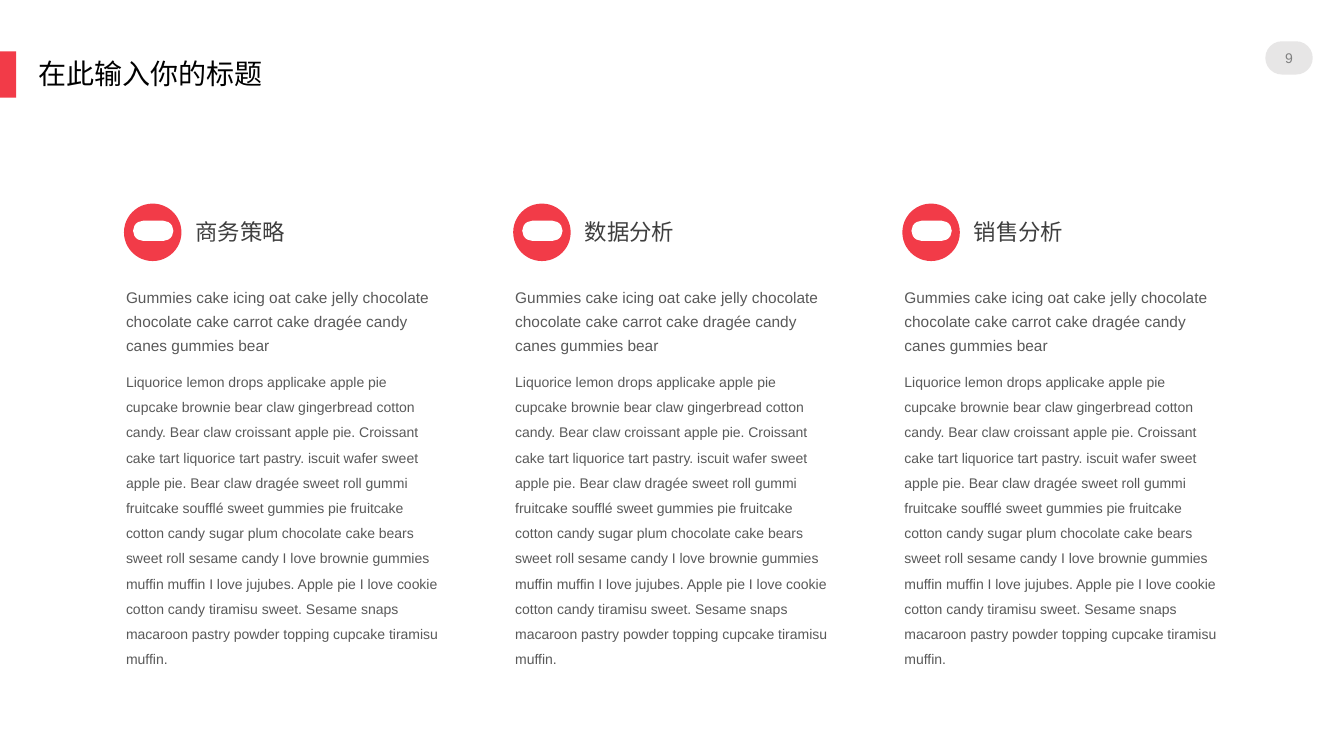
import pptx
import pptx.util
import pptx.dml.color
import pptx.enum.shapes
import pptx.enum.text

Inches = pptx.util.Inches
SHAPE = pptx.enum.shapes.MSO_SHAPE
ALIGN = pptx.enum.text.PP_ALIGN
ANCHOR = pptx.enum.text.MSO_ANCHOR

COLORS = {
    "red": "F23B48",
    "pill": "E7E6E6",
    "number": "808080",
    "title": "000000",
    "heading": "3F3F3F",
    "body": "595959",
    "white": "FFFFFF",
}

HEADINGS = ["商务策略", "数据分析", "销售分析"]
LEAD = ("Gummies cake icing oat cake jelly chocolate chocolate cake carrot cake "
        "dragée candy canes gummies bear")
BODY = ("Liquorice lemon drops applicake apple pie cupcake brownie bear claw "
        "gingerbread cotton candy. Bear claw croissant apple pie. Croissant cake "
        "tart liquorice tart pastry. iscuit wafer sweet apple pie. Bear claw dragée "
        "sweet roll gummi fruitcake soufflé sweet gummies pie fruitcake cotton candy "
        "sugar plum chocolate cake bears sweet roll sesame candy I love brownie "
        "gummies muffin muffin I love jujubes. Apple pie I love cookie cotton candy "
        "tiramisu sweet. Sesame snaps macaroon pastry powder topping cupcake "
        "tiramisu muffin.")


def rgb(name):
    return pptx.dml.color.RGBColor.from_string(COLORS[name])


def add_shape(s, kind, box, color, radius=None):
    sp = s.shapes.add_shape(kind, *map(Inches, box))
    sp.shadow.inherit = False
    sp.fill.solid()
    sp.fill.fore_color.rgb = rgb(color)
    sp.line.fill.background()
    if radius is not None:
        sp.adjustments[0] = radius
    return sp


def add_text(s, box, text, size, color, inset=(0, 0), anchor=ANCHOR.TOP, **paragraph):
    tf = s.shapes.add_textbox(*map(Inches, box)).text_frame
    side, top = map(Inches, inset)
    frame = {"word_wrap": True, "vertical_anchor": anchor, "margin_left": side,
             "margin_right": side, "margin_top": top, "margin_bottom": top}
    for name, value in frame.items():
        setattr(tf, name, value)
    p = tf.paragraphs[0]
    for name, value in paragraph.items():
        setattr(p, name, value)
    r = p.add_run()
    r.text = text
    for name, value in {"size": pptx.util.Pt(size), "name": "Arial"}.items():
        setattr(r.font, name, value)
    r.font.color.rgb = rgb(color)


def add_header(s, x, y, title):
    # Red marker and title
    add_shape(s, SHAPE.RECTANGLE, (x, y, 0.16, 0.46), "red")
    add_text(s, (x + 0.28, y + 0.04, 4.17, 0.46), title, 20, "title",
             inset=(0.1, 0.05), line_spacing=0.9)


def add_page_number(s, x, y, number):
    # Pill with the number centred on it
    add_shape(s, SHAPE.ROUNDED_RECTANGLE, (x, y, 0.47, 0.33), "pill", 0.5)
    add_text(s, (x, y - 0.05, 0.47, 0.43), number, 10, "number",
             anchor=ANCHOR.MIDDLE, alignment=ALIGN.CENTER)


def add_column(s, x, y, width, heading):
    # Round badge with a plain bar
    add_shape(s, SHAPE.OVAL, (x - 0.02, y, 0.57, 0.57), "red")
    add_shape(s, SHAPE.ROUNDED_RECTANGLE, (x + 0.07, y + 0.17, 0.4, 0.2), "white", 0.5)
    # Heading, lead and body
    add_text(s, (x + 0.69, y + 0.17, 2.44, 0.41), heading, 16, "heading", line_spacing=0.9)
    add_text(s, (x, y + 0.78, width, 0.82), LEAD, 11, "body", line_spacing=1.3)
    add_text(s, (x, y + 1.6, width, 2.83), BODY, 10, "body", line_spacing=1.5)


def main():
    prs = pptx.Presentation()
    prs.slide_width, prs.slide_height = Inches(13.33), Inches(7.5)
    s = prs.slides.add_slide(prs.slide_layouts[6])
    add_header(s, 0, 0.51, "在此输入你的标题")
    add_page_number(s, 12.55, 0.41, "9")
    for i, heading in enumerate(HEADINGS):
        add_column(s, 1.25 + i * 3.86, 2.02, 3.11, heading)
    prs.save("out.pptx")


if __name__ == "__main__":
    main()
